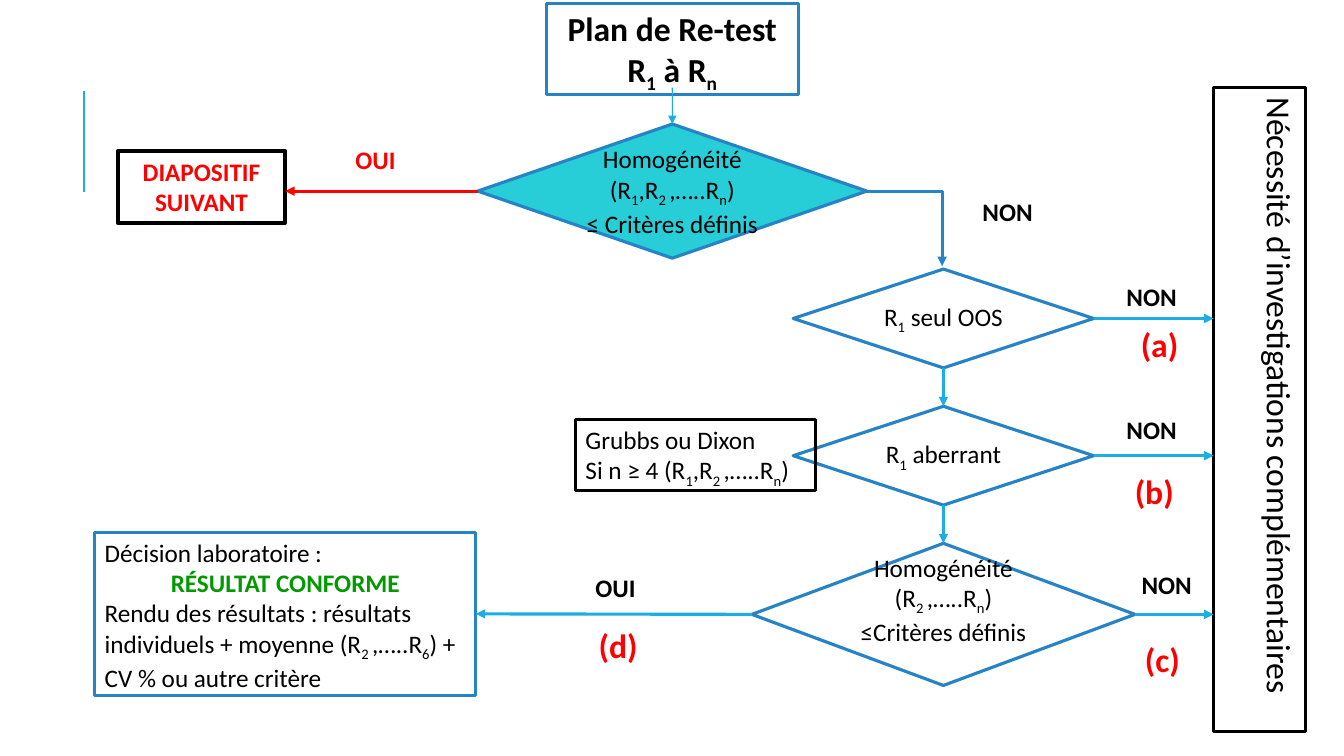
from pptx import Presentation
from pptx.dml.color import RGBColor
from pptx.enum.shapes import MSO_CONNECTOR, MSO_SHAPE
from pptx.enum.text import MSO_ANCHOR, MSO_AUTO_SIZE, PP_ALIGN
from pptx.oxml.ns import qn
from pptx.util import Pt
from lxml.etree import SubElement

BLACK, WHITE, RED, GREEN = "000000", "FFFFFF", "FF0000", "009900"
BLUE, SKY, TEAL = "2683C6", "1CADE4", "27CED7"
LEFT, MID = PP_ALIGN.LEFT, PP_ALIGN.CENTER
TOP, WEST, LOW, EAST = range(4)


def tint(code):
    return RGBColor.from_string(code)


def put(par, text, size=18, color=BLACK, bold=False, align=LEFT):
    """Fill a paragraph; {braces} mark subscripts."""
    par.alignment = align
    for i, part in enumerate(text.replace("}", "{").split("{")):
        if not part:
            continue
        run = par.add_run()
        run.text = part
        font = run.font
        font.name, font.size, font.bold = "Calibri", Pt(size), bold
        font.color.rgb = tint(color)
        if i % 2:
            run._r.get_or_add_rPr().set("baseline", "-25000")


class Chart:
    def __init__(self, slide):
        self.slide = slide
        self.shapes = slide.shapes

    def letter(self, shape, lines, anchor=MSO_ANCHOR.TOP, **style):
        frame = shape.text_frame
        frame.word_wrap = True
        frame.auto_size = MSO_AUTO_SIZE.NONE
        frame.vertical_anchor = anchor
        for i, line in enumerate(lines):
            par = frame.add_paragraph() if i else frame.paragraphs[0]
            text, extra = line if isinstance(line, tuple) else (line, {})
            put(par, text, **{**style, **extra})

    def paint(self, shape, line, width, fill):
        if fill:
            shape.fill.solid()
            shape.fill.fore_color.rgb = tint(fill)
        else:
            shape.fill.background()
        shape.line.color.rgb = tint(line)
        shape.line.width = Pt(width)

    def title(self, area, lines, line):
        shape = self.shapes.title
        shape.left, shape.top, shape.width, shape.height = map(Pt, area)
        self.paint(shape, line, 2.25, None)
        self.letter(shape, lines, size=24, bold=True, align=MID)

    def box(self, area, lines, kind=MSO_SHAPE.RECTANGLE, line=BLACK,
            width=2.25, fill=None, **style):
        shape = self.shapes.add_shape(kind, *map(Pt, area))
        shape.shadow.inherit = False
        self.paint(shape, line, width, fill)
        self.letter(shape, lines, **style)
        return shape

    def test(self, area, lines, fill=None):
        return self.box(area, lines, MSO_SHAPE.DIAMOND, BLUE, fill=fill,
                        anchor=MSO_ANCHOR.MIDDLE, align=MID)

    def label(self, x, y, text, w=59.8, h=29.5, **style):
        shape = self.shapes.add_textbox(*map(Pt, (x, y, w, h)))
        self.letter(shape, [text], bold=True, **style)

    def link(self, start, end, color=SKY, width=2.25, head=True):
        """Each end is an (x, y) point or a (shape, side) pair."""
        ends = [(0, 0) if hasattr(e[0], "shape_id") else e for e in (start, end)]
        wire = self.shapes.add_connector(
            MSO_CONNECTOR.STRAIGHT, *(Pt(v) for e in ends for v in e))
        for e, join in ((start, wire.begin_connect), (end, wire.end_connect)):
            if hasattr(e[0], "shape_id"):
                join(*e)
        wire.line.color.rgb = tint(color)
        wire.line.width = Pt(width)
        props = wire._element.spPr
        if head:
            SubElement(props.find(qn("a:ln")), qn("a:tailEnd"), type="triangle")
        SubElement(props, qn("a:effectLst"))


def main():
    deck = Presentation()
    deck.slide_width, deck.slide_height = Pt(960), Pt(540)
    chart = Chart(deck.slides.add_slide(deck.slide_layouts[5]))

    # Title and side rule
    chart.title((390.2, 2.2, 180, 65.5), ["Plan de Re-test", "R{1} à R{n}"], BLUE)
    chart.link((59.8, 136.8), (59.8, 64.8), width=1.5, head=False)

    # Decisions
    first = chart.test((341.3, 88.6, 277.9, 95.8), [
        "Homogénéité", "(R{1},R{2 },…..R{n})", "≤ Critères définis"], TEAL)
    alone = chart.test((566.6, 192.2, 214.6, 70.6), ["R{1} seul OOS"])
    stray = chart.test((566.6, 290.2, 214.6, 70.6), ["R{1} aberrant"])
    last = chart.test((537.1, 388.1, 273.6, 101.5), [
        "Homogénéité", "(R{2 },…..R{n}) ≤Critères définis"])
    last.text_frame.margin_bottom = Pt(25)

    # Boxes
    chart.box((411.1, 299.5, 171.4, 51.1), [
        "Grubbs ou Dixon", "Si n ≥ 4 (R{1},R{2 },…..R{n})"])
    needs = chart.box((669.6, 259.9, 460.1, 65.5), [
        "Nécessité d’investigations complémentaires"], fill=WHITE, size=24)
    needs.rotation = 90
    result = chart.box((67.7, 380.2, 272.2, 116.6), [
        "Décision laboratoire :",
        ("RÉSULTAT CONFORME", dict(color=GREEN, bold=True, align=MID)),
        "Rendu des résultats : résultats individuels + moyenne "
        "(R{2 },…..R{6}) + CV % ou autre critère"], line=BLUE)
    chart.box((84.2, 108, 119.5, 51.1), ["DIAPOSITIF SUIVANT"], width=3,
              color=RED, bold=True, align=MID)

    # Arrows
    chart.link((480.2, 62.6), (first, TOP), width=0.75)
    chart.link((first, WEST), (203.7, 136.5), RED)
    chart.link((first, EAST), (673.9, 136.5), BLUE, head=False)
    chart.link((673, 136.5), (673, 190.1), BLUE)
    chart.link((alone, LOW), (stray, TOP))
    chart.link((stray, LOW), (last, TOP))
    chart.link((last, WEST), (result, EAST))
    for step, y in ((alone, 227.5), (stray, 325.5), (last, 438.85)):
        chart.link((step, EAST), (866.9, y))

    # Answers
    for x, y in ((689.8, 136.8), (792.7, 197.3), (792.7, 292.3), (803.5, 403.2)):
        chart.label(x, y, "NON", align=MID)
    chart.label(409.7, 405.4, "OUI", align=MID)
    chart.label(238.3, 99.4, "OUI", align=MID, color=RED)

    # Case letters
    spots = (807.8, 228.2), (803.5, 332.6), (810.7, 452.9), (420.5, 442.8)
    for mark, (x, y) in zip("abcd", spots):
        chart.label(x, y, f"({mark})", 43.2, 36, size=24, color=RED)

    deck.save("out.pptx")


if __name__ == "__main__":
    main()
